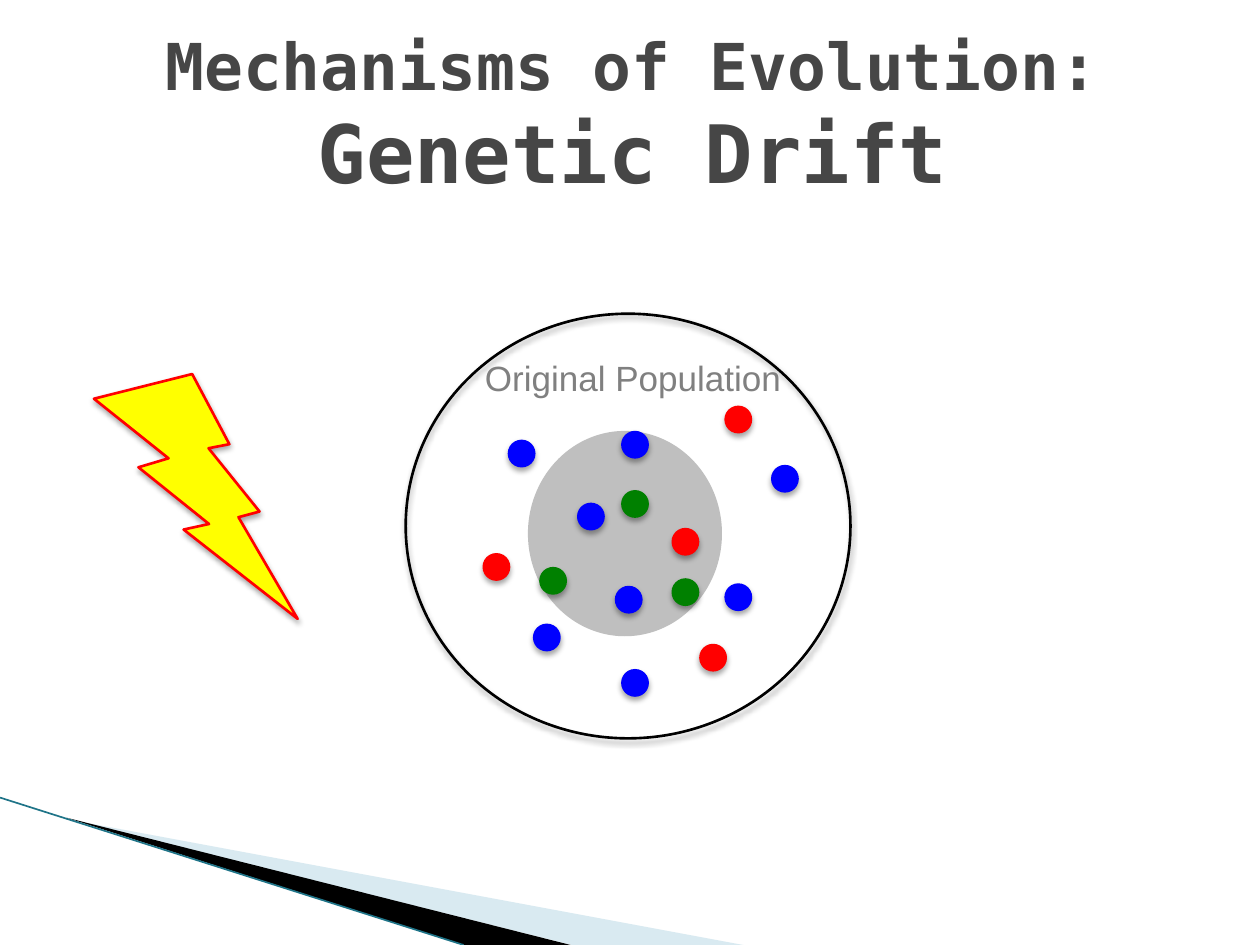
"""Build the genetic drift slide on a grid of 100 columns by 75 rows."""
from dataclasses import dataclass
from typing import Optional

import pptx
import pptx.dml.color
import pptx.enum.shapes
import pptx.enum.text
import pptx.oxml.ns
import pptx.util
from lxml import etree

SHAPE = pptx.enum.shapes.MSO_SHAPE
ANCHOR = pptx.enum.text.MSO_ANCHOR
COLUMNS, ROWS = 100, 75
CELL = pptx.util.Inches(0.1)
DOT = 2
COLOURS = {
    "blue": "0000FF", "red": "FF0000", "green": "008000", "yellow": "FFFF00",
    "black": "000000", "core": "BFBFBF", "label": "808080", "title": "464646",
    "pale": "A0CBDC", "teal": "1F7488",
}


@dataclass(frozen=True)
class Area:
    left: float
    top: float
    width: float
    height: float


@dataclass(frozen=True)
class Figure:
    kind: int
    area: Area
    fill: Optional[str] = None
    line: Optional[str] = None
    rotation: float = 0


@dataclass(frozen=True)
class Span:
    text: str
    size: float


@dataclass(frozen=True)
class Caption:
    area: Area
    font: str
    colour: str
    anchor: int
    spans: tuple[Span, ...]
    bold: bool = False


@dataclass(frozen=True)
class Wedge:
    points: tuple[tuple[float, float], ...]
    colour: str
    opacity: int = 100


ALLELES = {
    "blue": ((49.4, 34.3), (57.6, 46.4), (42.4, 49.6), (40.4, 35), (48.9, 46.6),
             (49.4, 53.2), (45.9, 40), (61.3, 37)),
    "red": ((57.6, 32.3), (55.6, 51.2), (53.4, 42), (38.4, 44)),
    "green": ((53.4, 46), (49.4, 39), (42.9, 45.1)),
}
WEDGES = (
    Wedge(((5.5, 65.05), (59, 75), (45.4, 75)), "pale", 40),
    Wedge(((5.3, 64.9), (45.3, 75), (36.8, 75)), "black"),
)
CORE = Figure(SHAPE.OVAL, Area(41.9, 34.2, 15.4, 16.3), fill="core")
POPULATION = Figure(SHAPE.OVAL, Area(32.2, 24.9, 35.3, 33.7), line="black")
BOLT = Figure(SHAPE.LIGHTNING_BOLT, Area(6.4, 29.9, 18.8, 17.8), "yellow", "red", 9.4)
LABEL = Caption(Area(36.9, 27.3, 26.7, 5), "Arial", "label", ANCHOR.TOP,
                (Span("Original Population", 20),))
TITLE = Caption(Area(9.6, 2.7, 81.2, 12.5), "DejaVu Sans Mono", "title", ANCHOR.MIDDLE,
                (Span("Mechanisms of Evolution: ", 36.9), Span("Genetic Drift", 46)), True)


def grid(cells: float) -> int:
    return round(cells * CELL)


def place(area: Area) -> tuple[int, ...]:
    return tuple(map(grid, (area.left, area.top, area.width, area.height)))


def rgb(name: str) -> pptx.dml.color.RGBColor:
    return pptx.dml.color.RGBColor.from_string(COLOURS[name])


def add_element(parent, tag: str, **attributes: str):
    return etree.SubElement(parent, pptx.oxml.ns.qn(tag), attributes)


def cast_shadow(shape) -> None:
    shape.shadow.inherit = False
    effects = shape._element.spPr.find(pptx.oxml.ns.qn("a:effectLst"))
    shadow = add_element(effects, "a:outerShdw", blurRad=str(pptx.util.Pt(3)),
                         dist=str(pptx.util.Pt(2)), dir="5400000", rotWithShape="0")
    colour = add_element(shadow, "a:srgbClr", val=COLOURS["black"])
    add_element(colour, "a:alpha", val="35000")


def draw_figure(page, figure: Figure) -> None:
    shape = page.shapes.add_shape(figure.kind, *place(figure.area))
    shape.rotation = figure.rotation
    shape.shadow.inherit = False
    if figure.fill:
        shape.fill.solid()
        shape.fill.fore_color.rgb = rgb(figure.fill)
    else:
        shape.fill.background()
    if figure.line:
        shape.line.color.rgb = rgb(figure.line)
        shape.line.width = pptx.util.Pt(1.5)
        cast_shadow(shape)
    else:
        shape.line.fill.background()


def draw_dots(page, colour: str) -> None:
    for left, top in ALLELES[colour]:
        draw_figure(page, Figure(SHAPE.OVAL, Area(left, top, DOT, DOT), colour, colour))


def draw_wedge(page, wedge: Wedge) -> None:
    start, *rest = [(grid(x), grid(y)) for x, y in wedge.points]
    builder = page.shapes.build_freeform(*start)
    builder.add_line_segments(rest, close=True)
    shape = builder.convert_to_shape()
    shape.shadow.inherit = False
    shape.line.fill.background()
    shape.fill.solid()
    shape.fill.fore_color.rgb = rgb(wedge.colour)
    if wedge.opacity < 100:
        colour = shape._element.spPr.find(".//" + pptx.oxml.ns.qn("a:srgbClr"))
        add_element(colour, "a:alpha", val=str(wedge.opacity * 1000))


def draw_edge(page) -> None:
    edge = page.shapes.add_connector(pptx.enum.shapes.MSO_CONNECTOR.STRAIGHT,
                                     0, grid(63.3), grid(36.8), grid(ROWS))
    edge.line.color.rgb = rgb("teal")
    edge.line.width = pptx.util.Pt(0.95)
    add_element(edge._element.spPr, "a:effectLst")


def draw_caption(page, caption: Caption) -> None:
    box = page.shapes.add_textbox(*place(caption.area))
    frame = box.text_frame
    frame.word_wrap = True
    frame.vertical_anchor = caption.anchor
    frame.margin_left = frame.margin_right = CELL
    frame.margin_top = frame.margin_bottom = CELL
    para = frame.paragraphs[0]
    para.alignment = pptx.enum.text.PP_ALIGN.CENTER
    for span in caption.spans:
        run = para.add_run()
        run.text = span.text
        run.font.name = caption.font
        run.font.size = pptx.util.Pt(span.size)
        run.font.bold = caption.bold
        run.font.color.rgb = rgb(caption.colour)


def main() -> None:
    deck = pptx.Presentation()
    deck.slide_width, deck.slide_height = grid(COLUMNS), grid(ROWS)
    page = deck.slides.add_slide(deck.slide_layouts[6])
    for wedge in WEDGES:
        draw_wedge(page, wedge)
    draw_edge(page)
    draw_figure(page, CORE)
    draw_figure(page, POPULATION)
    draw_caption(page, LABEL)
    for colour in ALLELES:
        draw_dots(page, colour)
    draw_caption(page, TITLE)
    draw_figure(page, BOLT)
    deck.save("out.pptx")


if __name__ == "__main__":
    main()
